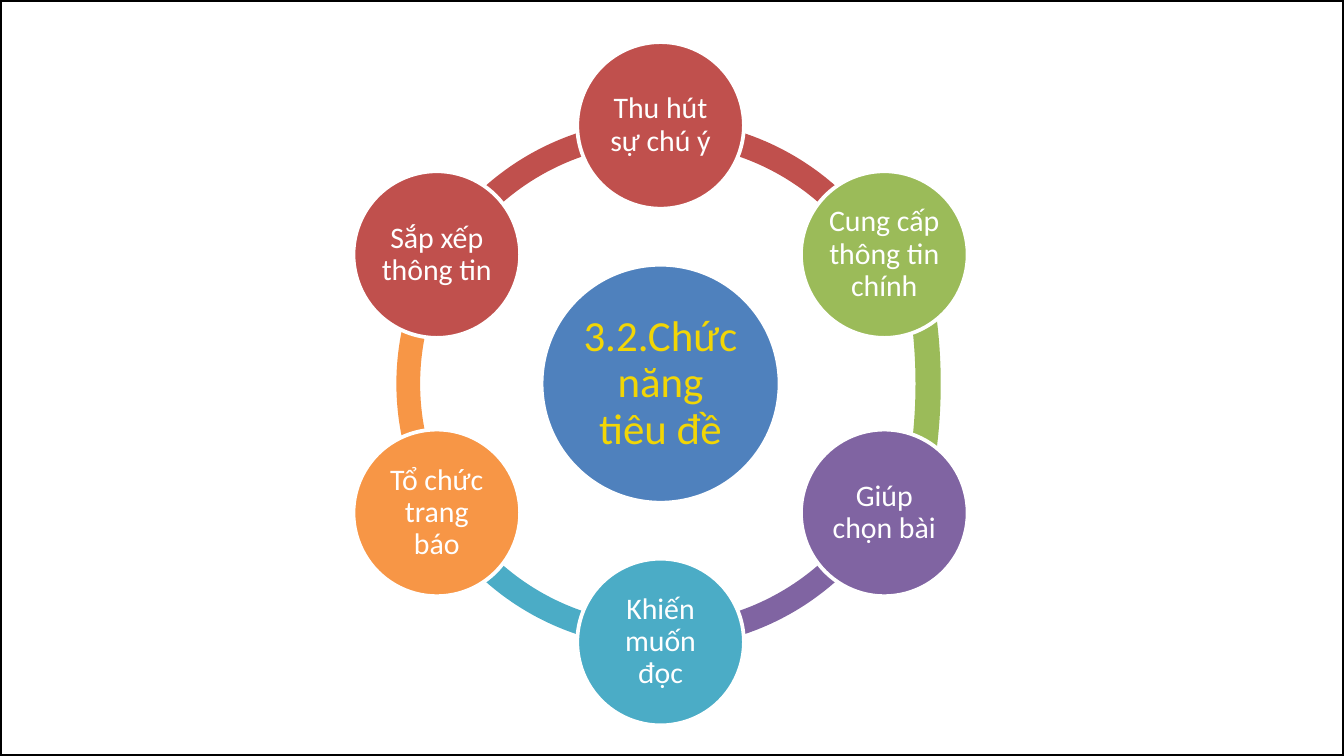
"""Build a radial slide of six headline functions around a central title."""
from dataclasses import dataclass
from math import cos, radians, sin

from pptx import Presentation
from pptx.dml.color import RGBColor
from pptx.enum.shapes import MSO_SHAPE as Shp
from pptx.enum.text import MSO_ANCHOR as Anchor, MSO_AUTO_SIZE as AutoSize, PP_ALIGN as Align
from pptx.util import Pt

BLACK = RGBColor(0x00, 0x00, 0x00)
WHITE = RGBColor(0xFF, 0xFF, 0xFF)
YELLOW = RGBColor(0xF2, 0xD6, 0x05)
BLUE = RGBColor(0x4F, 0x81, 0xBD)
RED = RGBColor(0xC0, 0x50, 0x4D)
GREEN = RGBColor(0x9B, 0xBB, 0x59)
PURPLE = RGBColor(0x80, 0x64, 0xA2)
TEAL = RGBColor(0x4B, 0xAC, 0xC6)
ORANGE = RGBColor(0xF7, 0x96, 0x46)

SLIDE_W, SLIDE_H = 720, 405
CX, CY = 353.9, 205.6
ORBIT = 138.4
NODE_D, HUB_D, TITLE_D = 89.3, 127.5, 90
RING = (283, 283)
TALL_RING = (300.2, 411.1)
RING_THICKNESS = 0.045
DEGREE = 0.6


@dataclass(frozen=True)
class Node:
    text: str
    fill: RGBColor
    arc_fill: RGBColor
    ring: tuple[float, float] = RING


NODES = [
    Node("Thu hút sự chú ý", RED, RED),
    Node("Cung cấp thông tin chính", GREEN, GREEN, TALL_RING),
    Node("Giúp chọn bài", PURPLE, PURPLE),
    Node("Khiến muốn đọc", TEAL, TEAL),
    Node("Tổ chức trang báo", ORANGE, ORANGE),
    Node("Sắp xếp thông tin", RED, RED),
]
STEP = 360 / len(NODES)


def add_centred(s, kind, cx: float, cy: float, w: float, h: float, *, fill: RGBColor, line=None):
    sp = s.shapes.add_shape(kind, Pt(cx - w / 2), Pt(cy - h / 2), Pt(w), Pt(h))
    sp.shadow.inherit = False
    sp.fill.solid()
    sp.fill.fore_color.rgb = fill
    if line is None:
        sp.line.fill.background()
    else:
        sp.line.color.rgb = line
        sp.line.width = Pt(2)
    return sp


def write(sp, text: str, *, size: float, color: RGBColor, inset: float) -> None:
    tf = sp.text_frame
    tf.word_wrap = True
    tf.auto_size = AutoSize.NONE
    tf.vertical_anchor = Anchor.MIDDLE
    tf.margin_left = tf.margin_right = tf.margin_top = tf.margin_bottom = Pt(inset)
    p = tf.paragraphs[0]
    p.alignment = Align.CENTER
    p.line_spacing = 0.9
    r = p.add_run()
    r.text = text
    r.font.name = "Calibri"
    r.font.size = Pt(size)
    r.font.color.rgb = color


def add_arc(s, node: Node, start: float) -> None:
    sp = add_centred(s, Shp.BLOCK_ARC, CX, CY, *node.ring, fill=node.arc_fill)
    sp.adjustments[0] = start % 360 * DEGREE
    sp.adjustments[1] = (start + STEP) % 360 * DEGREE
    sp.adjustments[2] = RING_THICKNESS


def add_node(s, node: Node, angle: float) -> None:
    x = CX + ORBIT * cos(radians(angle))
    y = CY + ORBIT * sin(radians(angle))
    sp = add_centred(s, Shp.OVAL, x, y, NODE_D, NODE_D, fill=node.fill, line=WHITE)
    write(sp, node.text, size=16, color=WHITE, inset=1.6)


def add_hub(s, text: str) -> None:
    add_centred(s, Shp.OVAL, CX, CY, HUB_D, HUB_D, fill=BLUE, line=WHITE)
    title = s.shapes.title
    title.left, title.top = Pt(CX - TITLE_D / 2), Pt(CY - TITLE_D / 2)
    title.width = title.height = Pt(TITLE_D)
    write(title, text, size=23, color=YELLOW, inset=2.3)
    title.element.getparent().append(title.element)


def main() -> None:
    prs = Presentation()
    prs.slide_width, prs.slide_height = Pt(SLIDE_W), Pt(SLIDE_H)
    s = prs.slides.add_slide(prs.slide_layouts[5])
    s.background.fill.solid()
    s.background.fill.fore_color.rgb = BLACK
    add_centred(s, Shp.RECTANGLE, SLIDE_W / 2, SLIDE_H / 2, SLIDE_W, SLIDE_H,
                fill=WHITE, line=BLACK)
    angles = [-90 + i * STEP for i in range(len(NODES))]
    for node, angle in reversed(list(zip(NODES, angles))):
        add_arc(s, node, angle)
    add_hub(s, "3.2.Chức năng tiêu đề")
    for node, angle in zip(NODES, angles):
        add_node(s, node, angle)
    prs.save("out.pptx")


if __name__ == "__main__":
    main()
